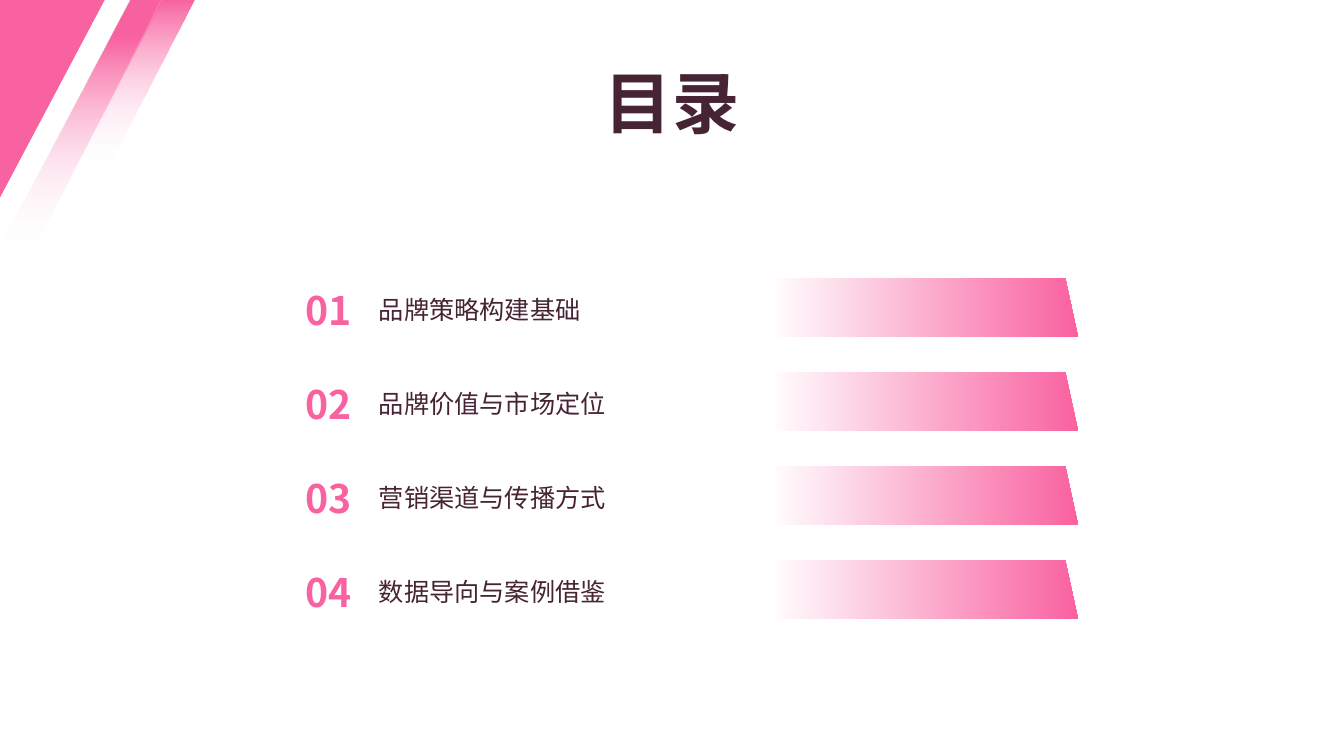
import dataclasses

import pptx
import pptx.dml.color
import pptx.enum.shapes
import pptx.enum.text
import pptx.oxml
import pptx.oxml.ns
import pptx.util

Cm = pptx.util.Cm
Shapes = pptx.enum.shapes.MSO_SHAPE
Anchor = pptx.enum.text.MSO_ANCHOR
Align = pptx.enum.text.PP_ALIGN


@dataclasses.dataclass(frozen=True)
class Theme:
    font: str = "Noto Sans CJK SC"
    pink: str = "F962A0"
    plum: str = "472433"
    white: str = "FFFFFF"
    title_size: int = 48
    number_size: int = 28
    topic_size: int = 18


THEME = Theme()
TOPICS = ["品牌策略构建基础", "品牌价值与市场定位", "营销渠道与传播方式", "数据导向与案例借鉴"]
FIRST_ROW, ROW_PITCH = 7.0, 2.37


def rgb(value):
    return pptx.dml.color.RGBColor.from_string(value)


def finish(shape):
    shape.shadow.inherit = False
    shape.line.fill.background()


def fill_gradient(shape, stops, angle, fade=False):
    """Fill with two (position, colour) stops; fade makes the last one clear."""
    shape.fill.gradient()
    shape.fill.gradient_angle = angle
    for stop, (position, colour) in zip(shape.fill.gradient_stops, stops):
        stop.position = position
        stop.color.rgb = rgb(colour)
    if fade:
        last_colour = shape._element.xpath(".//a:gradFill//a:srgbClr")[-1]
        alpha = pptx.oxml.parse_xml(
            f'<a:alpha {pptx.oxml.ns.nsdecls("a")} val="0"/>')
        last_colour.append(alpha)


def flip(shape, direction):
    shape._element.spPr.find(pptx.oxml.ns.qn("a:xfrm")).set(direction, "1")


def write(shape, text, size, colour, bold=False, align=Align.LEFT, anchor=Anchor.MIDDLE):
    frame = shape.text_frame
    frame.word_wrap = True
    frame.auto_size = pptx.enum.text.MSO_AUTO_SIZE.NONE
    frame.vertical_anchor = anchor
    para = frame.paragraphs[0]
    para.alignment = align
    span = para.add_run()
    span.text = text
    span.font.name = THEME.font
    span.font.size = pptx.util.Pt(size)
    span.font.bold = bold
    span.font.color.rgb = rgb(colour)
    east_asian = pptx.oxml.parse_xml(
        f'<a:ea {pptx.oxml.ns.nsdecls("a")} typeface="{THEME.font}"/>')
    span.font._element.find(pptx.oxml.ns.qn("a:latin")).addnext(east_asian)


def add_ribbon(page, corners, solid_until):
    points = [(Cm(x), Cm(y)) for x, y in corners]
    builder = page.shapes.build_freeform(*points[0])
    builder.add_line_segments(points[1:], close=True)
    ribbon = builder.convert_to_shape()
    finish(ribbon)
    fill_gradient(ribbon, [(solid_until, THEME.pink), (1, THEME.white)], 270, fade=True)


def add_corner(page):
    triangle = page.shapes.add_shape(
        Shapes.RIGHT_TRIANGLE, Cm(0), Cm(0), Cm(2.64), Cm(4.98))
    finish(triangle)
    triangle.fill.solid()
    triangle.fill.fore_color.rgb = rgb(THEME.pink)
    flip(triangle, "flipV")


def add_title(page, text):
    title = page.shapes.title
    title.left, title.top, title.width, title.height = Cm(14.73), Cm(1.42), Cm(4.42), Cm(2.57)
    write(title, text, THEME.title_size, THEME.plum, True, Align.CENTER, Anchor.TOP)


def add_topic(page, number, topic, top):
    row = page.shapes.add_group_shape()
    bar = row.shapes.add_shape(
        Shapes.PARALLELOGRAM, Cm(6.65), Cm(top), Cm(20.52), Cm(1.5))
    bar.adjustments[0] = 0.217
    finish(bar)
    flip(bar, "flipH")
    fill_gradient(bar, [(0.62, THEME.white), (1, THEME.pink)], 180)

    label = row.shapes.add_textbox(Cm(9.3), Cm(top - 0.1), Cm(17.91), Cm(1.78))
    write(label, topic, THEME.topic_size, THEME.plum)
    numeral = row.shapes.add_textbox(Cm(7.44), Cm(top + 0.04), Cm(1.75), Cm(1.52))
    write(numeral, f"{number:02}", THEME.number_size, THEME.pink, bold=True)


def main():
    deck = pptx.Presentation()
    deck.slide_width, deck.slide_height = Cm(33.87), Cm(19.05)
    page = deck.slides.add_slide(deck.slide_layouts.get_by_name("Title Only"))

    # Corner decoration
    add_ribbon(page, [(0.84, 6.3), (0, 6.27), (3.28, 0), (4.09, 0)], 0.15)
    add_corner(page)
    add_ribbon(page, [(4.06, 0), (4.9, 0), (2.69, 4.29), (1.91, 4.24)], 0)

    # Heading and contents
    add_title(page, "目录")
    for index, topic in enumerate(TOPICS):
        add_topic(page, index + 1, topic, FIRST_ROW + index * ROW_PITCH)

    deck.save("out.pptx")


if __name__ == "__main__":
    main()
